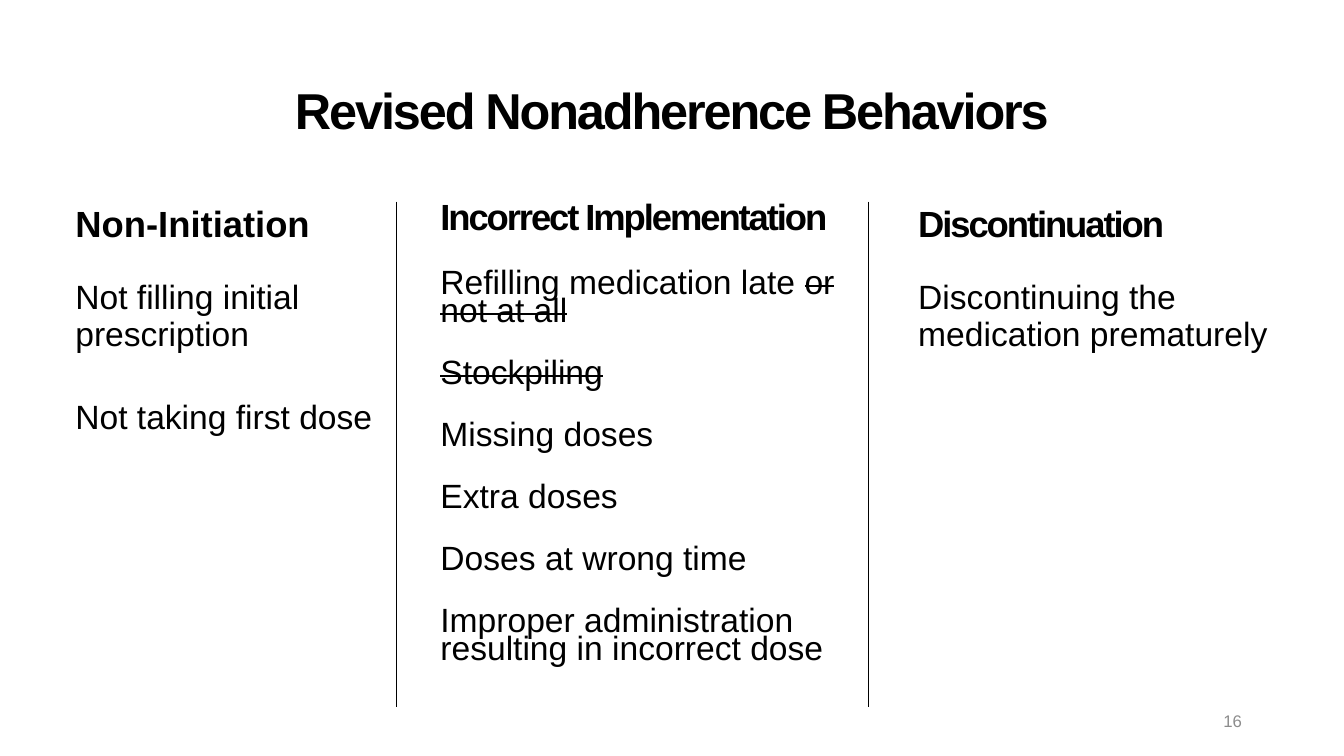
from pptx import Presentation
from pptx.dml.color import RGBColor
from pptx.enum.shapes import MSO_CONNECTOR
from pptx.enum.text import MSO_ANCHOR, PP_ALIGN
from pptx.oxml.ns import qn
from pptx.util import Cm, Pt
from lxml.etree import SubElement

BLACK = RGBColor(0x00, 0x00, 0x00)
GREY = RGBColor(0x8C, 0x8C, 0x8C)
FONT = "Arial"
TITLE_ONLY = 5
COLUMN_TOP = Cm(5.08)
COLUMN_HEIGHT = Cm(12.09)
DIVIDER_BOTTOM = Cm(17.81)


def format_paragraph(para, size, color=BLACK, bold=False):
    para.font.name = FONT
    para.font.size = Pt(size)
    para.font.bold = bold
    para.font.color.rgb = color


def add_span(para, text, tight=False, struck=False):
    span = para.add_run()
    span.text = text
    properties = span._r.get_or_add_rPr()
    if tight:
        properties.set("spc", "-150")
    if struck:
        properties.set("strike", "sngStrike")


def set_title(page, text):
    title = page.shapes.title
    title.left, title.top = Cm(0), Cm(1.02)
    title.width, title.height = Cm(33.87), Cm(3.68)
    title.text_frame.vertical_anchor = MSO_ANCHOR.MIDDLE
    para = title.text_frame.paragraphs[0]
    para.alignment = PP_ALIGN.CENTER
    para.line_spacing = 0.9
    format_paragraph(para, 36, bold=True)
    add_span(para, text, tight=True)


def add_box(page, left, top, width, height):
    box = page.shapes.add_textbox(left, top, width, height)
    box.text_frame.word_wrap = True
    return box.text_frame


def add_column(page, left, width, heading, items, spacing, gaps, tight=True):
    frame = add_box(page, left, COLUMN_TOP, width, COLUMN_HEIGHT)
    para = frame.paragraphs[0]
    para.line_spacing = spacing
    para.space_before = Pt(10)
    format_paragraph(para, 26, bold=True)
    add_span(para, heading, tight=tight)

    heading_gap, item_gap = gaps
    for index, (kept, removed) in enumerate(items):
        para = frame.add_paragraph()
        para.line_spacing = spacing
        para.space_before = Pt(item_gap if index else heading_gap)
        format_paragraph(para, 24)
        if kept:
            add_span(para, kept)
        if removed:
            add_span(para, removed, struck=True)


def add_divider(page, left):
    line = page.shapes.add_connector(
        MSO_CONNECTOR.STRAIGHT, left, COLUMN_TOP, left, DIVIDER_BOTTOM)
    line.line.color.rgb = BLACK
    line.line.width = Pt(0.5)
    SubElement(line._element.spPr, qn("a:effectLst"))


def add_page_number(page, number):
    frame = add_box(page, Cm(23.93), Cm(17.65), Cm(7.62), Cm(1.02))
    frame.vertical_anchor = MSO_ANCHOR.MIDDLE
    para = frame.paragraphs[0]
    para.alignment = PP_ALIGN.RIGHT
    format_paragraph(para, 12, GREY)
    add_span(para, number)


def main():
    deck = Presentation()
    deck.slide_width, deck.slide_height = Cm(33.87), Cm(19.05)
    page = deck.slides.add_slide(deck.slide_layouts[TITLE_ONLY])

    set_title(page, "Revised Nonadherence Behaviors")
    add_column(page, Cm(1.65), Cm(8.26), "Non-Initiation", [
        ("Not filling initial prescription", ""),
        ("Not taking first dose", ""),
    ], 0.9, (25, 34), tight=False)
    add_column(page, Cm(10.85), Cm(11.66), "Incorrect Implementation", [
        ("Refilling medication late ", "or not at all"),
        ("", "Stockpiling"),
        ("Missing doses", ""),
        ("Extra doses", ""),
        ("Doses at wrong time", ""),
        ("Improper administration resulting in incorrect dose", ""),
    ], 0.7, (25, 24))
    add_column(page, Cm(22.89), Cm(9.35), "Discontinuation", [
        ("Discontinuing the medication prematurely", ""),
    ], 0.9, (25, 34))

    for left in (Cm(9.98), Cm(21.89)):
        add_divider(page, left)
    add_page_number(page, "16")

    deck.save("out.pptx")


if __name__ == "__main__":
    main()
